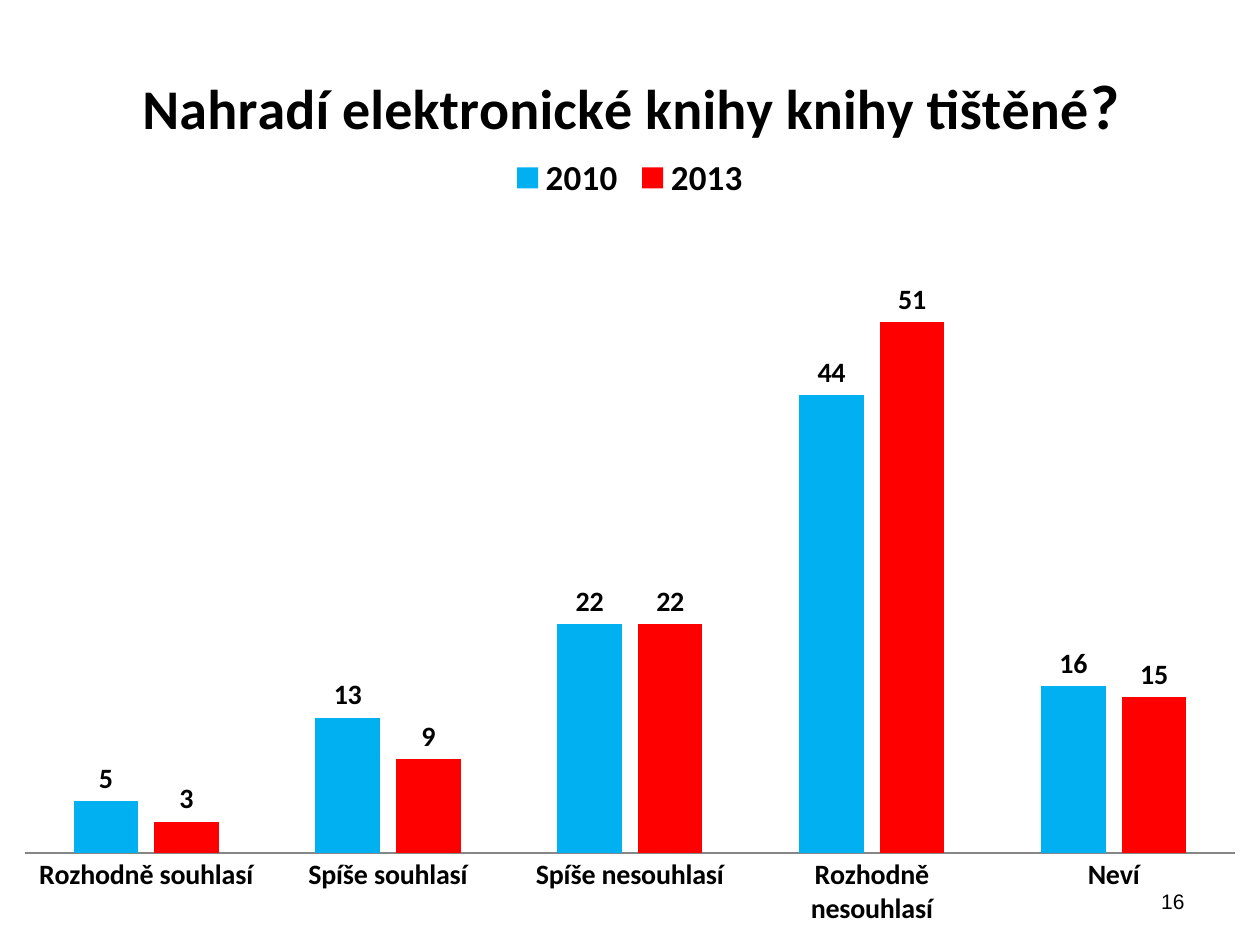
import pptx
import pptx.util
import pptx.chart.data
import pptx.dml.color
import pptx.enum.chart
import pptx.enum.text
import pptx.oxml

WIDE, HIGH = 10, 7.5
TITLE = [("Nahradí elektronické knihy knihy tištěné", 32), ("?", 36)]
CATS = ["Rozhodně souhlasí", "Spíše souhlasí", "Spíše nesouhlasí",
        "Rozhodně nesouhlasí", "Neví"]
BARS = [("2010", "00B0F0", (5, 13, 22, 44, 16)),
        ("2013", "FF0000", (3, 9, 22, 51, 15))]
PAGE = "16"
# Shares of the chart area: left, top, width, height
PLOT = (0.02, 0.22, 0.96, 0.68)
KEY = (0.4, 0.14, 0.2, 0.05)
HEAD = (0.11, 0.04)


def color(code):
    return pptx.dml.color.RGBColor.from_string(code)


def style(font, size, bold=True, name="Calibri"):
    font.size = pptx.util.Pt(size)
    font.bold = bold
    font.name = name
    font.color.rgb = color("000000")


def box(*parts):
    return [pptx.util.Inches(part) for part in parts]


def layout(shares, inner=False):
    """Return a manual chart layout made from shares of the chart area."""
    tags = '<c:layoutTarget val="inner"/>' if inner else ""
    tags += '<c:xMode val="edge"/><c:yMode val="edge"/>'
    for tag, share in zip("xywh", shares):
        tags += f'<c:{tag} val="{share}"/>'
    return pptx.oxml.parse_xml(
        '<c:layout xmlns:c="http://schemas.openxmlformats.org/drawingml/2006/chart">'
        f"<c:manualLayout>{tags}</c:manualLayout></c:layout>")


def place(node, tag, new):
    """Put a layout in place of the old one, or right after the given child."""
    for old in node.xpath("c:layout"):
        node.remove(old)
    if tag:
        node.xpath(f"c:{tag}")[0].addnext(new)
    else:
        node.insert(0, new)


def add_bars(slide):
    data = pptx.chart.data.CategoryChartData()
    data.categories = CATS
    for name, _, vals in BARS:
        data.add_series(name, vals)
    kind = pptx.enum.chart.XL_CHART_TYPE.COLUMN_CLUSTERED
    chart = slide.shapes.add_chart(
        kind, *box(0, 0.21, WIDE, HIGH - 0.21), data).chart
    style(chart.font, 10, False)

    chart.has_title = True
    para = chart.chart_title.text_frame.paragraphs[0]
    for text, size in TITLE:
        run = para.add_run()
        run.text = text
        style(run.font, size)
    chart.chart_title.include_in_layout = False

    chart.has_legend = True
    chart.legend.position = pptx.enum.chart.XL_LEGEND_POSITION.TOP
    chart.legend.include_in_layout = False
    style(chart.legend.font, 20)

    axis = chart.category_axis
    axis.major_tick_mark = pptx.enum.chart.XL_TICK_MARK.NONE
    axis.format.line.color.rgb = color("868686")
    style(axis.tick_labels.font, 16)
    scale = chart.value_axis
    scale.minimum_scale, scale.maximum_scale = 0, 60
    scale.has_major_gridlines = False
    scale.visible = False

    plot = chart.plots[0]
    plot.gap_width, plot.overlap = 150, -25
    plot.vary_by_categories = False
    for bar, (_, code, _) in zip(plot.series, BARS):
        bar.format.fill.solid()
        bar.format.fill.fore_color.rgb = color(code)
        labels = bar.data_labels
        labels.show_value = True
        labels.position = pptx.enum.chart.XL_LABEL_POSITION.OUTSIDE_END
        style(labels.font, 16)

    area = chart.element.xpath("c:chart/c:plotArea")[0]
    title = chart.element.xpath("c:chart/c:title")[0]
    legend = chart.element.xpath("c:chart/c:legend")[0]
    place(area, None, layout(PLOT, inner=True))
    place(title, "tx", layout(HEAD))
    place(legend, "legendPos", layout(KEY))


def add_page(slide):
    frame = slide.shapes.add_textbox(*box(7.17, 6.95, 2.33, 0.4)).text_frame
    frame.word_wrap = True
    frame.vertical_anchor = pptx.enum.text.MSO_ANCHOR.MIDDLE
    frame.text = PAGE
    para = frame.paragraphs[0]
    para.alignment = pptx.enum.text.PP_ALIGN.RIGHT
    style(para.runs[0].font, 12, False, "Arial")


def main():
    deck = pptx.Presentation()
    deck.slide_width, deck.slide_height = box(WIDE, HIGH)
    slide = deck.slides.add_slide(deck.slide_layouts[6])
    add_page(slide)
    add_bars(slide)
    deck.save("out.pptx")


if __name__ == "__main__":
    main()
